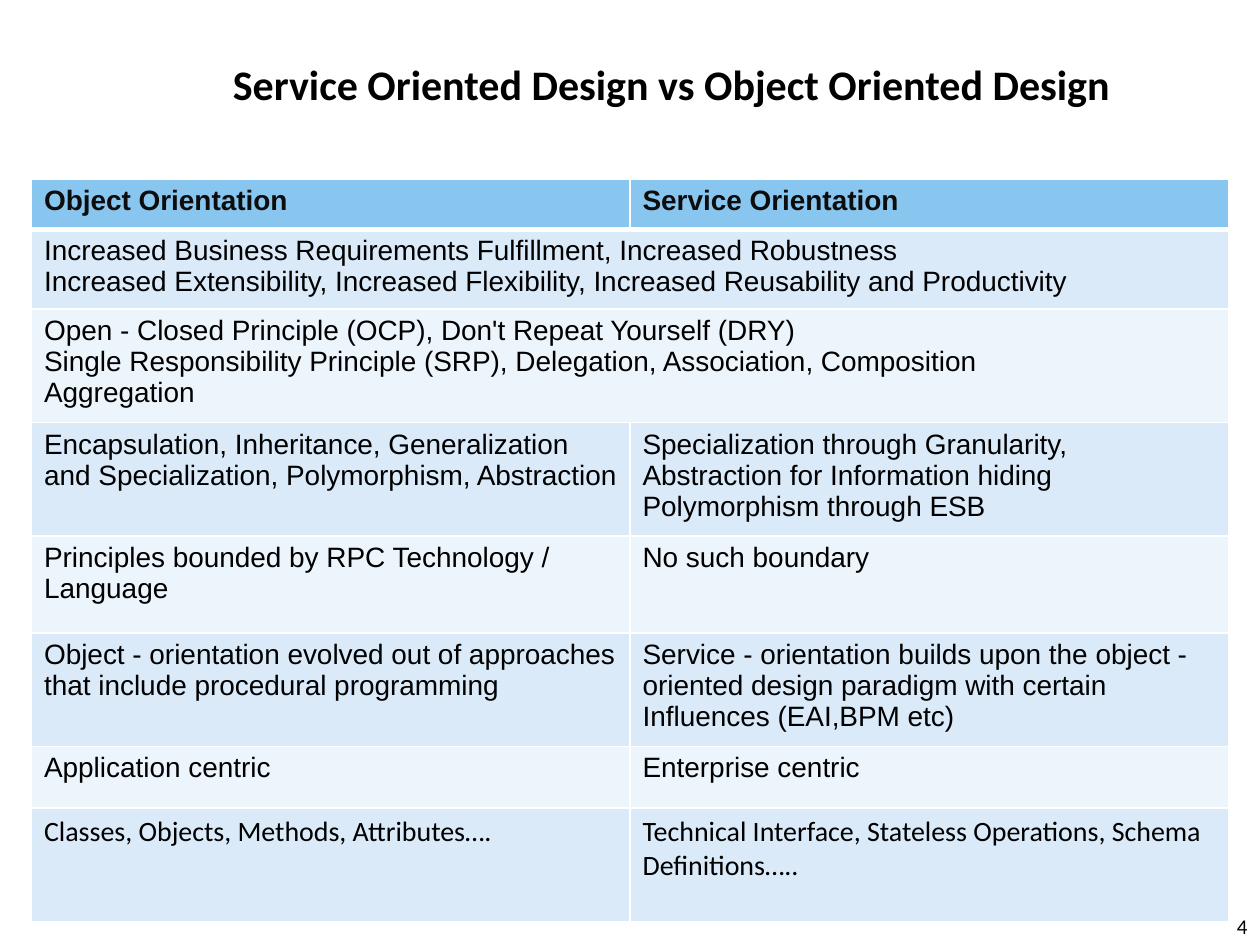
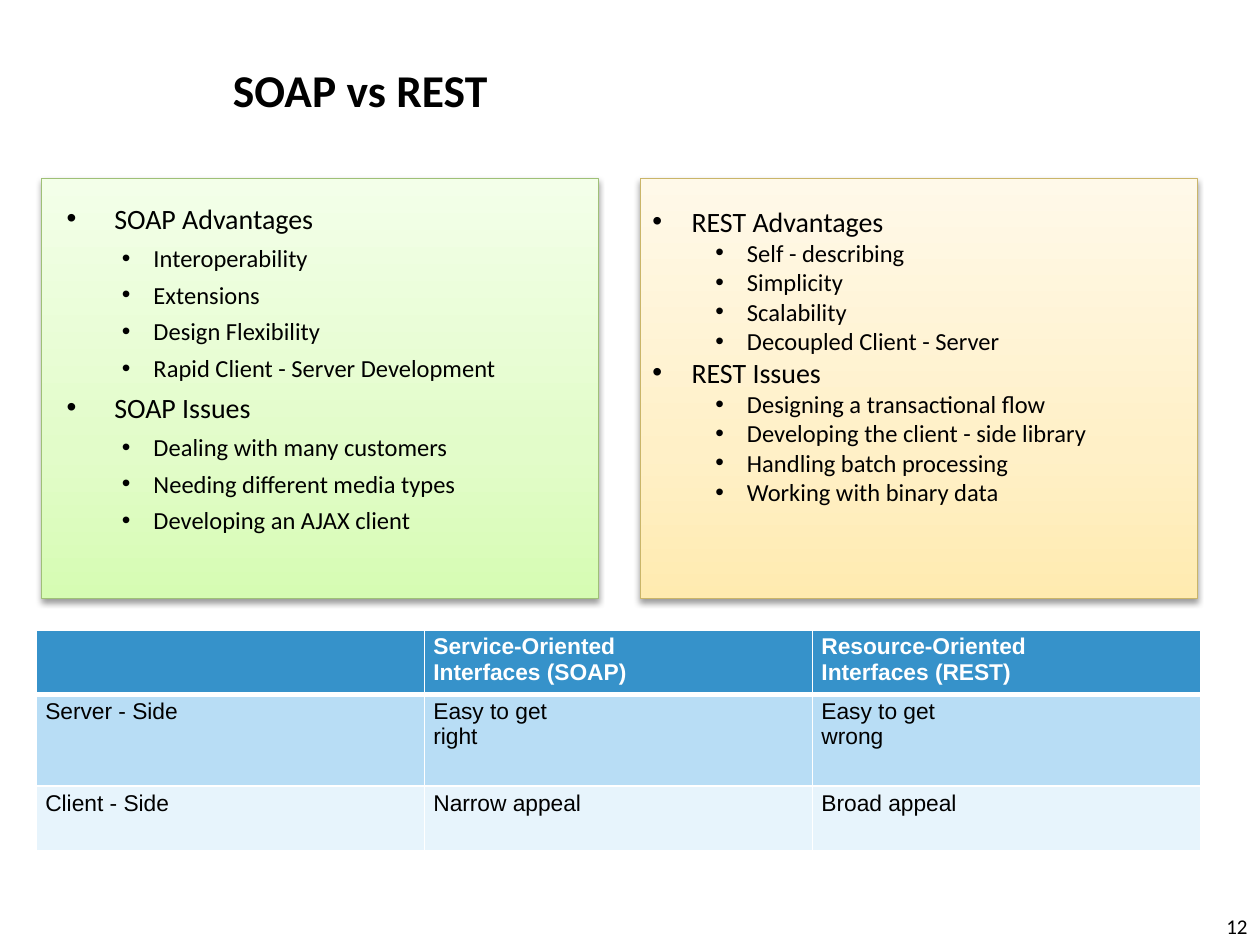
from lxml import etree
from pptx import Presentation
from pptx.dml.color import RGBColor
from pptx.enum.shapes import MSO_SHAPE
from pptx.enum.text import MSO_ANCHOR, PP_ALIGN
from pptx.oxml import parse_xml
from pptx.oxml.ns import nsdecls, qn
from pptx.util import Inches, Pt

RECTANGLE = MSO_SHAPE.RECTANGLE
TOP, MIDDLE, BOTTOM = MSO_ANCHOR.TOP, MSO_ANCHOR.MIDDLE, MSO_ANCHOR.BOTTOM
LEFT, RIGHT = PP_ALIGN.LEFT, PP_ALIGN.RIGHT

COLORS = {
    "black": "000000",
    "white": "FFFFFF",
    "ink": "0D0D0D",
    "design_header": "89C6EF",
    "design_odd": "DAEAF9",
    "design_even": "EDF5FC",
    "side_header": "3692CA",
    "side_odd": "B8DDF5",
    "side_even": "E7F4FC",
    "soap_line": "9FC077",
    "rest_line": "CAB569",
}
GRADIENTS = {
    "soap": [(0, "D6FCB3"), (35, "E2FCC9"), (100, "F3FFE9")],
    "rest": [(0, "FFEBB0"), (35, "FFF0C7"), (100, "FFF9E9")],
}
HEADING, BODY = "Calibri", "Arial"

DESIGN_ROWS = [
    ("Object Orientation", "Service Orientation"),
    ("Increased Business Requirements Fulfillment, Increased Robustness\n"
     "Increased Extensibility, Increased Flexibility, Increased Reusability and Productivity",),
    ("Open - Closed Principle (OCP), Don't Repeat Yourself (DRY)\n"
     "Single Responsibility Principle (SRP), Delegation, Association, Composition\n"
     "Aggregation",),
    ("Encapsulation, Inheritance, Generalization and Specialization, Polymorphism, Abstraction",
     "Specialization through Granularity,\nAbstraction for Information hiding\n"
     "Polymorphism through ESB"),
    ("Principles bounded by RPC Technology / Language", "No such boundary"),
    ("Object - orientation evolved out of approaches that include procedural programming",
     "Service - orientation builds upon the object - oriented design paradigm with certain "
     "Influences (EAI,BPM etc)"),
    ("Application centric", "Enterprise centric"),
    ("Classes, Objects, Methods, Attributes….",
     "Technical Interface, Stateless Operations, Schema Definitions….."),
]
DESIGN_HEIGHTS = [0.4, 0.59, 0.84, 0.84, 0.77, 0.84, 0.49, 0.9]

SIDE_ROWS = [
    ("", "Service-Oriented\nInterfaces (SOAP)", "Resource-Oriented\nInterfaces (REST)"),
    ("Server - Side", "Easy to get\nright", "Easy to get\nwrong"),
    ("Client - Side", "Narrow appeal", "Broad appeal"),
]
SIDE_HEIGHTS = [0.51, 0.73, 0.51]

SOAP_POINTS = [
    ("SOAP Advantages", ["Interoperability", "Extensions", "Design Flexibility",
                         "Rapid Client - Server Development"]),
    ("SOAP Issues", ["Dealing with many customers", "Needing different media types",
                     "Developing an AJAX client"]),
]
REST_POINTS = [
    ("REST Advantages", ["Self - describing", "Simplicity", "Scalability",
                         "Decoupled Client - Server"]),
    ("REST Issues", ["Designing a transactional flow", "Developing the client - side library",
                     "Handling batch processing", "Working with binary data"]),
]


def color(name):
    return RGBColor.from_string(COLORS[name])


def style(paragraph, size, font, ink="black", bold=False):
    paragraph.font.size = Pt(size)
    paragraph.font.name = font
    paragraph.font.bold = bold
    paragraph.font.color.rgb = color(ink)


def add_box(page, place, anchor=TOP):
    box = page.shapes.add_textbox(*map(Inches, place))
    box.text_frame.word_wrap = True
    box.text_frame.vertical_anchor = anchor
    return box.text_frame


def add_page(deck, title, title_place, title_size, number):
    page = deck.slides.add_slide(deck.slide_layouts[6])
    for text, place, size, anchor, align in [
        (title, title_place, title_size, MIDDLE, LEFT),
        (str(number), (7.67, 6.98, 2.33, 0.52), 12, BOTTOM, RIGHT),
    ]:
        frame = add_box(page, place, anchor)
        frame.text = text
        frame.paragraphs[0].alignment = align
        style(frame.paragraphs[0], size, HEADING, bold=anchor == MIDDLE)
    return page


def add_borders(cell, top, bottom):
    properties = cell._tc.get_or_add_tcPr()
    for side, width in [("L", 1), ("R", 1), ("T", top), ("B", bottom)]:
        properties.append(parse_xml(
            f'<a:ln{side} {nsdecls("a")} w="{Pt(width)}"><a:solidFill>'
            f'<a:srgbClr val="{COLORS["white"]}"/></a:solidFill></a:ln{side}>'))


def add_grid(page, left, top, column_width, rows, heights, theme, size, header_ink, inset,
             last_font=BODY):
    count = len(rows[0])
    table = page.shapes.add_table(len(rows), count, Inches(left), Inches(top),
                                  Inches(column_width * count), Inches(sum(heights))).table
    for column in table.columns:
        column.width = Inches(column_width)
    for index, (texts, height) in enumerate(zip(rows, heights)):
        table.rows[index].height = Inches(height)
        band = "header" if index == 0 else "odd" if index % 2 else "even"
        font = last_font if index == len(rows) - 1 else BODY
        for cell in table.rows[index].cells:
            add_borders(cell, 3 if index == 1 else 1, 3 if index == 0 else 1)
            cell.fill.solid()
            cell.fill.fore_color.rgb = color(f"{theme}_{band}")
            cell.margin_left = cell.margin_right = Inches(inset)
            cell.margin_top = cell.margin_bottom = Inches(inset / 2)
        if len(texts) < count:
            table.cell(index, 0).merge(table.cell(index, count - 1))
        for position, text in enumerate(texts):
            frame = table.cell(index, position).text_frame
            frame.text = text
            for paragraph in frame.paragraphs:
                style(paragraph, size, font, "black" if index else header_ink, index == 0)


def add_panel(page, left, name):
    panel = page.shapes.add_shape(RECTANGLE, *map(Inches, (left, 1.42, 4.42, 3.33)))
    panel.line.color.rgb = color(f"{name}_line")
    panel.line.width = Pt(0.5)
    stops = "".join(f'<a:gs pos="{share * 1000}"><a:srgbClr val="{tint}"/></a:gs>'
                    for share, tint in GRADIENTS[name])
    properties = panel._element.spPr
    properties.find(qn("a:prstGeom")).addnext(parse_xml(
        f'<a:gradFill {nsdecls("a")} rotWithShape="1"><a:gsLst>{stops}</a:gsLst>'
        '<a:lin ang="16200000" scaled="0"/></a:gradFill>'))
    properties.append(parse_xml(
        f'<a:effectLst {nsdecls("a")}><a:outerShdw blurRad="{Pt(3.5)}" dist="{Pt(2)}" '
        f'dir="5400000" rotWithShape="0"><a:srgbClr val="{COLORS["black"]}">'
        '<a:alpha val="38000"/></a:srgbClr></a:outerShdw></a:effectLst>'))
    return panel.text_frame


def add_points(frame, groups, indents, spacing=0):
    points = [(level, text) for head, items in groups
              for level, text in [(0, head)] + [(1, item) for item in items]]
    for index, (level, text) in enumerate(points):
        paragraph = frame.add_paragraph() if index else frame.paragraphs[0]
        paragraph.text = text
        paragraph.level = level
        paragraph.alignment = LEFT
        margin, hanging = indents[level]
        properties = paragraph._p.get_or_add_pPr()
        properties.set("marL", str(Inches(margin)))
        properties.set("indent", str(-Inches(hanging)))
        etree.SubElement(properties, qn("a:buFont"), typeface=BODY)
        etree.SubElement(properties, qn("a:buChar"), char="•")
        size = 14 if level else 16
        paragraph.space_before = Pt(size * spacing if index else 0)
        paragraph.space_after = Pt(size * spacing)
        style(paragraph, size, HEADING)


def build_design(deck):
    page = add_page(deck, "Service Oriented Design vs Object Oriented Design",
                    (1.75, 0.04, 8.25, 1.25), 24, 4)
    add_grid(page, 0.25, 1.42, 4.75, DESIGN_ROWS, DESIGN_HEIGHTS, "design", 16, "ink", 0.1,
             last_font=HEADING)


def build_protocols(deck):
    page = add_page(deck, "SOAP vs REST", (1.75, 0.25, 7.83, 0.92), 26, 12)
    add_panel(page, 0.33, "soap")
    add_points(add_box(page, (0.43, 1.55, 4.33, 3.17)), SOAP_POINTS,
               [(0.38, 0.38), (0.69, 0.25)], spacing=0.15)
    rest = add_panel(page, 5.08, "rest")
    rest.word_wrap = True
    rest.vertical_anchor = TOP
    rest.margin_top = Inches(0.2)
    add_points(rest, REST_POINTS, [(0.31, 0.31), (0.75, 0.25)])
    add_grid(page, 0.29, 5, 3.08, SIDE_ROWS, SIDE_HEIGHTS, "side", 13, "white", 0.07)


def main():
    deck = Presentation()
    deck.slide_width, deck.slide_height = Inches(10), Inches(7.5)
    build_design(deck)
    build_protocols(deck)
    deck.save("out.pptx")


if __name__ == "__main__":
    main()
